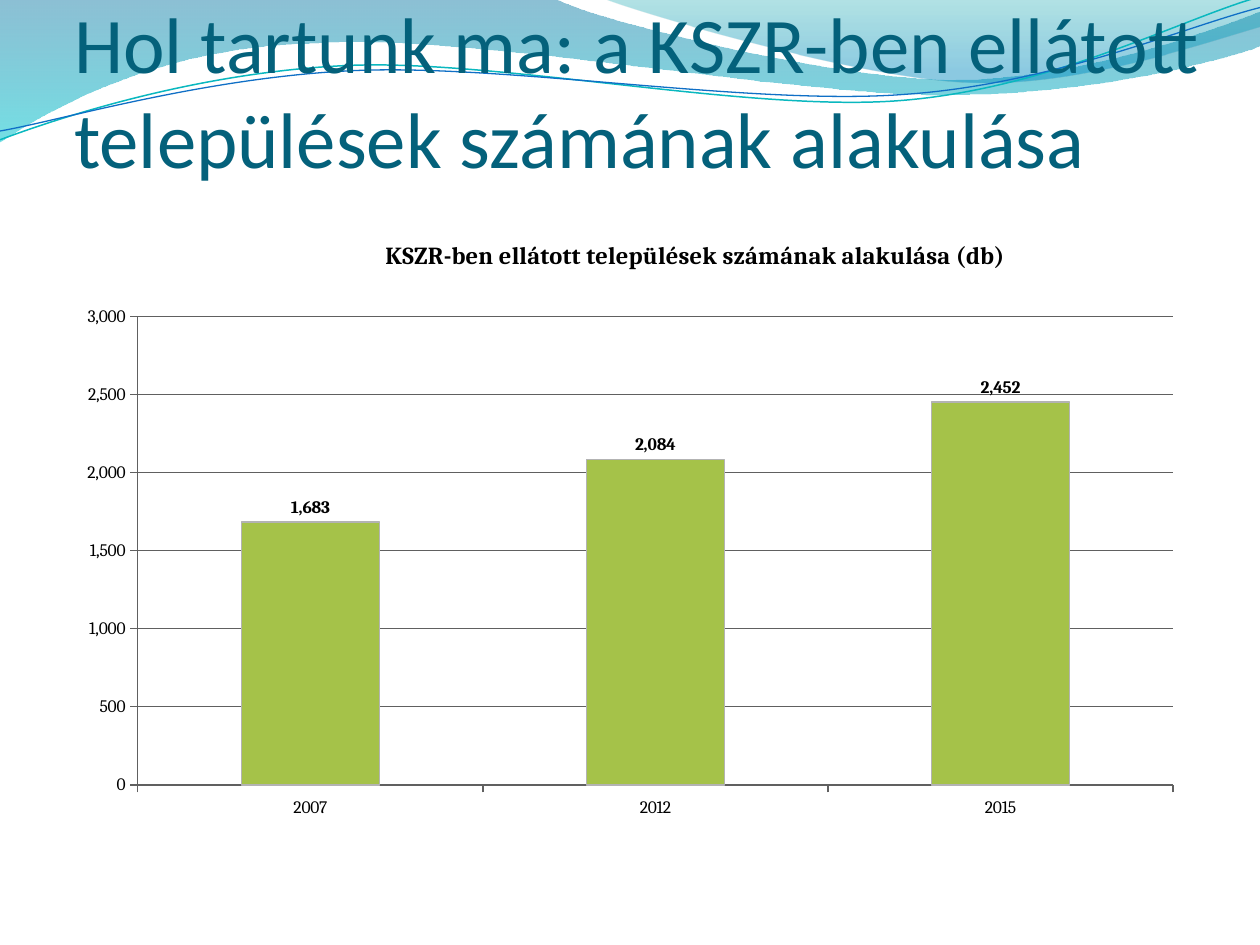
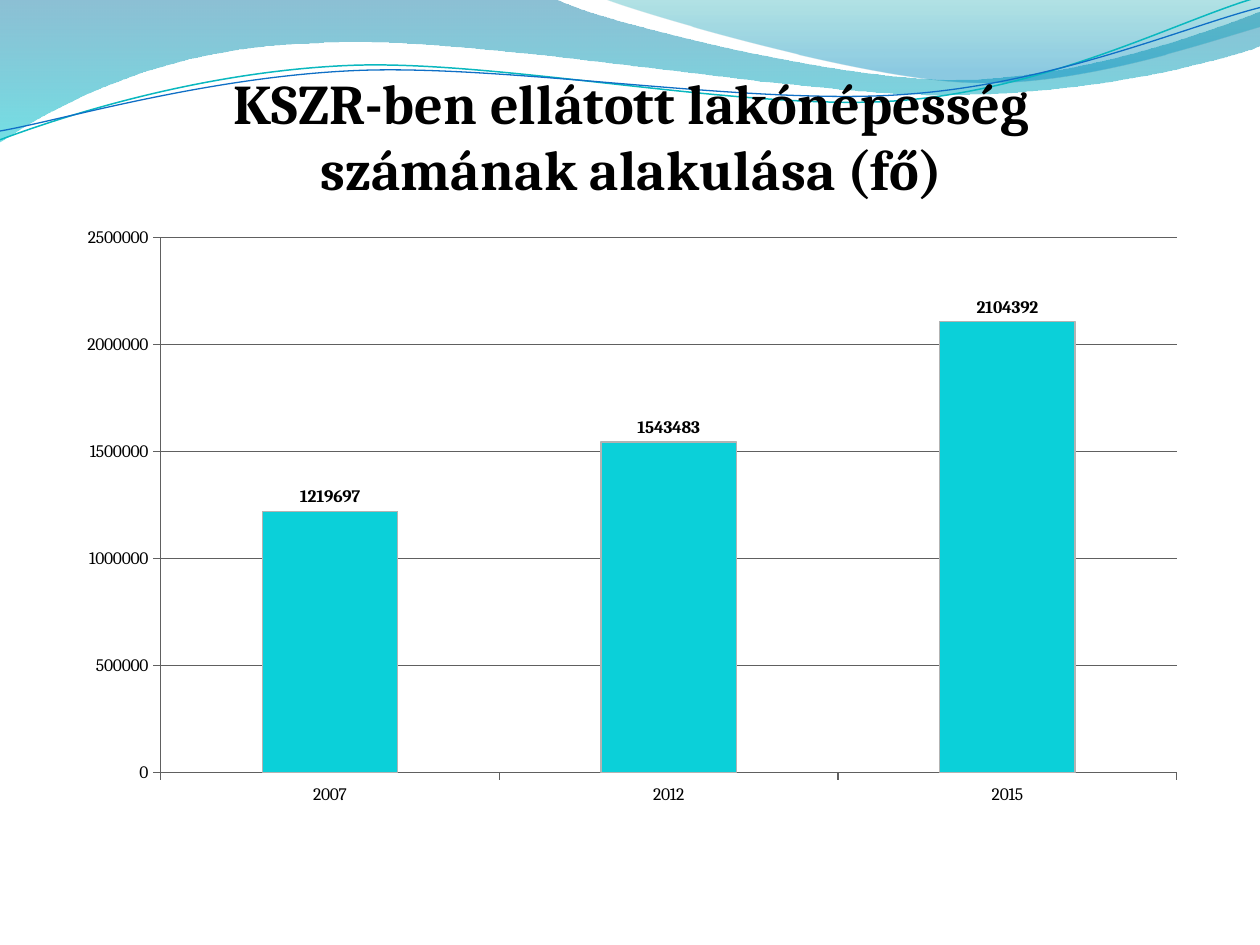
from collections import namedtuple

from lxml import etree
from pptx import Presentation
from pptx.chart.data import CategoryChartData
from pptx.dml.color import RGBColor
from pptx.enum.chart import XL_CHART_TYPE, XL_LABEL_POSITION, XL_TICK_MARK
from pptx.enum.text import MSO_ANCHOR
from pptx.oxml.ns import qn
from pptx.util import Inches, Pt

COLUMNS = XL_CHART_TYPE.COLUMN_CLUSTERED
ABOVE_BAR = XL_LABEL_POSITION.OUTSIDE_END
TICK_OUT = XL_TICK_MARK.OUTSIDE
BOTTOM = MSO_ANCHOR.BOTTOM

SLIDE_W, SLIDE_H = Inches(10), Inches(7.5)
GRID = SLIDE_W // 10
TITLE_FONT, CHART_FONT = "Calibri", "Cambria"
COLORS = {
    "title": "04617B", "text": "000000", "axis": "606060", "bar_edge": "B3B3B3",
    "settlements": "A5C249", "population": "0BD0D9",
    "deep": "0074A1", "aqua": "00C6CF", "teal": "00A1A9", "sky": "008BBF",
    "teal_line": "0AB8BF", "blue_line": "0F6FC6",
}

Box = namedtuple("Box", "left top width height")
WAVE_BOX = Box(0, 0, 10, 1.14)
YEARS = ("2007", "2012", "2015")

WAVE_FILLS = (
    (((0, 0), (4.4, -0.01), (4.76, 0.17, 6.64, 0.63, 7.58, 0.63),
      (8.53, 0.63, 9.58, 0.26, 10, 0.09), (10.01, 0.36),
      (9.83, 0.44, 8.7, 0.76, 7.46, 0.75), (6.22, 0.75, 3.82, 0.28, 2.57, 0.34),
      (1.29, 0.36, 0.46, 0.83, -0.01, 1.13), (0, 0)),
     ((0, "deep", 45), (1, "aqua", 55))),
    (((4.79, -0.01), (5.09, 0.11, 6.82, 0.62, 7.69, 0.65),
      (8.56, 0.69, 9.61, 0.32, 10, 0.21), (10, 0), (4.79, -0.01)),
     ((0, "teal", 30), (0.8, "sky", 45))),
)
WAVE_LINES = (
    (((0, 1.11), (0.48, 0.93, 1.58, 0.57, 2.77, 0.52),
      (3.95, 0.47, 5.93, 0.89, 7.13, 0.8), (8.33, 0.71, 9.38, 0.15, 9.98, -0.02)),
     "teal_line", 0.85),
    (((0, 1.04), (0.47, 0.96, 1.64, 0.61, 2.83, 0.56),
      (4.03, 0.51, 5.97, 0.84, 7.17, 0.75), (8.36, 0.67, 9.41, 0.21, 10, 0.06)),
     "blue_line", 0.75),
)


def rgb(name):
    return RGBColor.from_string(COLORS[name])


def emu(box):
    return [round(length * GRID) for length in box]


def style_font(font, name, size, color, bold=False):
    font.name, font.size, font.bold = name, Pt(size), bold
    font.color.rgb = rgb(color)


def style_line(line, color, width=0.75):
    line.color.rgb = rgb(color)
    line.width = Pt(width)


def bend_segments(curve, segments):
    corners = iter(list(curve.element.iter(qn("a:lnTo"))))
    for segment in segments:
        first = next(corners)
        if len(segment) == 2:
            continue
        bend = etree.Element(qn("a:cubicBezTo"))
        first.addprevious(bend)
        for corner in (first, next(corners), next(corners)):
            bend.append(corner[0])
            corner.getparent().remove(corner)


def add_curve(slide, box, outline, close):
    points = [emu((box.left + segment[i], box.top + segment[i + 1]))
              for segment in outline for i in range(0, len(segment), 2)]
    builder = slide.shapes.build_freeform(*points[0])
    builder.add_line_segments(points[1:], close=close)
    curve = builder.convert_to_shape()
    bend_segments(curve, outline[1:])
    curve.shadow.inherit = False
    return curve


def draw_waves(slide, box):
    for outline, shades in WAVE_FILLS:
        wave = add_curve(slide, box, outline, True)
        wave.line.fill.background()
        wave.fill.gradient()
        wave.fill.gradient_angle = 270
        for stop, (position, color, _) in zip(wave.fill.gradient_stops, shades):
            stop.position = position
            stop.color.rgb = rgb(color)
        tints = wave.element.spPr.iter(qn("a:srgbClr"))
        for tint, (_, _, opacity) in zip(tints, shades):
            etree.SubElement(tint, qn("a:alpha")).set("val", str(opacity * 1000))
    for outline, color, width in WAVE_LINES:
        stroke = add_curve(slide, box, outline, False)
        stroke.fill.background()
        style_line(stroke.line, color, width)


def draw_heading(slide, box, text):
    frame = slide.shapes.add_textbox(*emu(box)).text_frame
    frame.word_wrap = True
    frame.vertical_anchor = BOTTOM
    frame.margin_left = frame.margin_right = frame.margin_bottom = 0
    frame.text = text
    style_font(frame.paragraphs[0].runs[0].font, TITLE_FONT, 45, "title")


def set_layout(parent, index, percents, inner=False):
    for old in parent.findall(qn("c:layout")):
        parent.remove(old)
    layout = etree.Element(qn("c:layout"))
    manual = etree.SubElement(layout, qn("c:manualLayout"))
    settings = [("layoutTarget", "inner")] if inner else []
    settings += [("xMode", "edge"), ("yMode", "edge")]
    settings += [(key, str(share / 100)) for key, share in zip("xywh", percents)]
    for key, value in settings:
        etree.SubElement(manual, qn("c:" + key)).set("val", value)
    parent.insert(index, layout)


def draw_column_chart(slide, box, title, title_size, values, color, number_format,
                      top_value, step, plot_area, title_place):
    data = CategoryChartData()
    data.categories = YEARS
    data.add_series("Series 1", values)
    chart = slide.shapes.add_chart(COLUMNS, *emu(box), data).chart
    chart.has_legend = False
    style_font(chart.font, CHART_FONT, 10, "text")

    chart.has_title = True
    caption = chart.chart_title.text_frame
    caption.text = title
    style_font(caption.paragraphs[0].runs[0].font, CHART_FONT, title_size, "text", True)
    chart.chart_title.include_in_layout = False
    set_layout(chart.element.find(".//" + qn("c:title")), 1, title_place)
    set_layout(chart.element.find(".//" + qn("c:plotArea")), 0, plot_area, True)

    for axis in (chart.category_axis, chart.value_axis):
        axis.major_tick_mark = TICK_OUT
        style_line(axis.format.line, "axis")
    scale = chart.value_axis
    scale.minimum_scale, scale.maximum_scale, scale.major_unit = 0, top_value, step
    scale.has_major_gridlines = True
    style_line(scale.major_gridlines.format.line, "axis")
    scale.tick_labels.number_format = number_format
    scale.tick_labels.number_format_is_linked = False

    plot = chart.plots[0]
    plot.gap_width = 150
    plot.vary_by_categories = False
    bars = plot.series[0]
    bars.format.fill.solid()
    bars.format.fill.fore_color.rgb = rgb(color)
    style_line(bars.format.line, "bar_edge")
    plot.has_data_labels = True
    labels = plot.data_labels
    labels.show_value = True
    labels.position = ABOVE_BAR
    labels.number_format = number_format
    labels.number_format_is_linked = False
    style_font(labels.font, CHART_FONT, 10, "text", True)


def add_wave_slide(deck):
    slide = deck.slides.add_slide(deck.slide_layouts[6])
    draw_waves(slide, WAVE_BOX)
    return slide


def add_settlements_slide(deck):
    slide = add_wave_slide(deck)
    draw_heading(slide, Box(0.59, 0.2, 9, 1.26),
                 "Hol tartunk ma: a KSZR-ben ellátott települések számának alakulása")
    draw_column_chart(slide, Box(0.51, 1.86, 8.98, 4.72),
                      "KSZR-ben ellátott települések számának alakulása (db)", 14,
                      (1683, 2084, 2452), "settlements", "#,##0", 3000, 500,
                      (6.5, 13.8, 91.5, 78.8), (28, -0.3))


def add_population_slide(deck):
    slide = add_wave_slide(deck)
    draw_column_chart(slide, Box(0.51, 0.36, 9, 6.14),
                      "KSZR-ben ellátott lakónépesség számának alakulása (fő)", 32,
                      (1219697, 1543483, 2104392), "population", "0", 2500000, 500000,
                      (8.5, 24.8, 89.6, 69.2), (14, 1.5))


def main():
    deck = Presentation()
    deck.slide_width, deck.slide_height = SLIDE_W, SLIDE_H
    add_settlements_slide(deck)
    add_population_slide(deck)
    deck.save("out.pptx")


if __name__ == "__main__":
    main()
